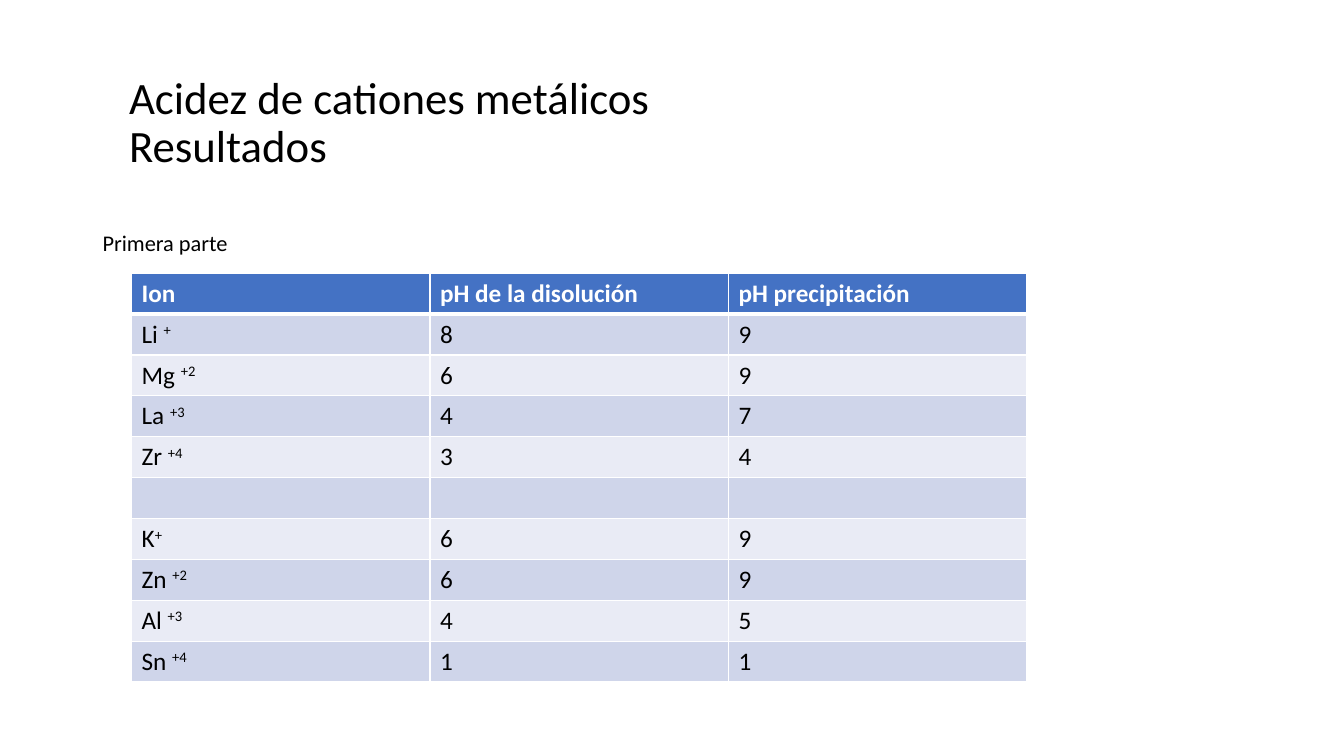
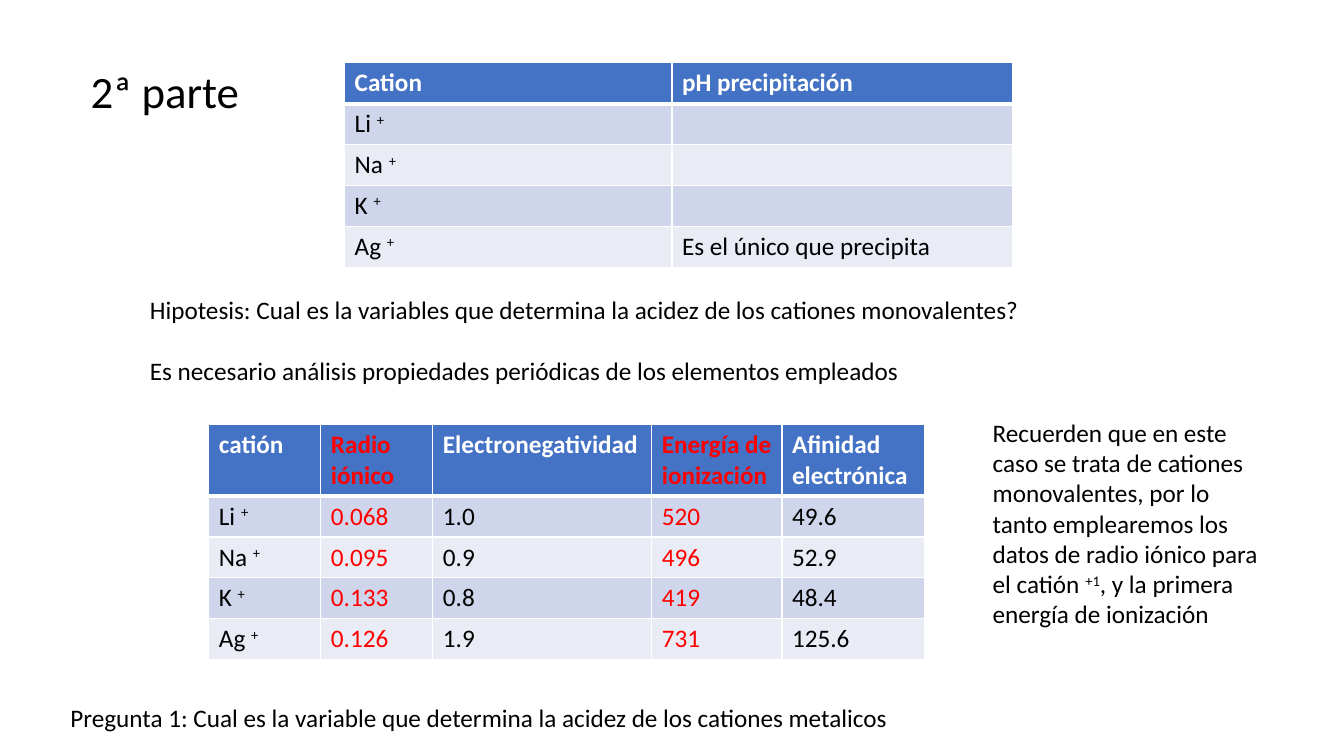
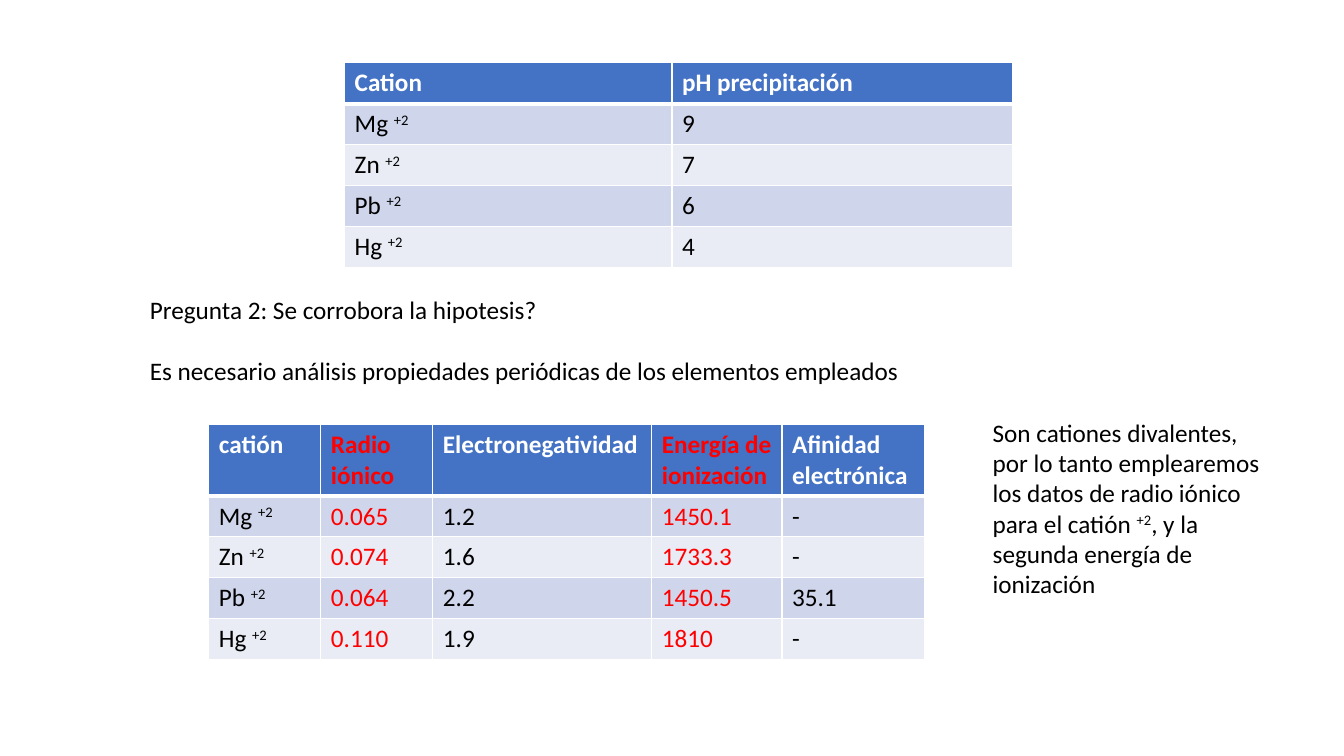
from dataclasses import dataclass
from lxml.etree import SubElement
from pptx import Presentation
from pptx.dml.color import RGBColor as Color
from pptx.enum.text import MSO_ANCHOR as Anchor, MSO_AUTO_SIZE as AutoSize, PP_ALIGN as Align
from pptx.oxml.ns import qn
from pptx.util import Pt


@dataclass(frozen=True)
class Theme:
    font: str = "Calibri"
    text: str = "000000"
    light: str = "FFFFFF"
    accent: str = "FF0000"
    header: str = "4472C4"
    bands: tuple = ("CFD5EA", "E9EBF5")
    title_size: float = 32
    body_size: float = 18
    label_size: float = 16
    line_spacing: float = 0.9
    superscript: str = "30000"
    paragraph_gap: float = 22
    row_height: float = 29.2
    tall_header: float = 51.1
    border: float = 1
    header_border: float = 3


THEME = Theme()

PH_PLACE = dict(left=246.2, top=44.9, widths=(233.8, 243))
PROPERTY_PLACE = dict(left=149.2, top=303.2, widths=(80, 80, 156.4, 93, 101.6),
                      header_height=THEME.tall_header, accent_columns=(1, 3))
STATEMENT_BOX = (100, 206.6, 670, 73)
NOTE_BOX = (702, 294.5, 210, 160)

PH_HEADER = ("Cation", "pH precipitación")
PROPERTY_HEADER = ("catión", "Radio iónico", "Electronegatividad",
                   "Energía de ionización", "Afinidad electrónica")
ANALYSIS = "Es necesario análisis propiedades periódicas de los elementos empleados"

SLIDES = [
    dict(
        title=("Acidez de cationes metálicos\vResultados", (85, 42.5, 688, 84.2)),
        label=("Primera parte", (66.2, 162, 726, 30)),
        tables=[(dict(left=94, top=195.2, widths=(213.2,) * 3), [
            ("Ion", "pH de la disolución", "pH precipitación"),
            ("Li ^+", "8", "9"),
            ("Mg ^+2", "6", "9"),
            ("La ^+3", "4", "7"),
            ("Zr ^+4", "3", "4"),
            ("", "", ""),
            ("K^+", "6", "9"),
            ("Zn ^+2", "6", "9"),
            ("Al ^+3", "4", "5"),
            ("Sn ^+4", "1", "1"),
        ])],
        texts=[],
    ),
    dict(
        title=("2ª parte", (57.6, 33.8, 180, 54)),
        tables=[
            (PH_PLACE, [
                PH_HEADER,
                ("Li ^+", ""),
                ("Na ^+", ""),
                ("K ^+", ""),
                ("Ag ^+", "Es el único que precipita"),
            ]),
            (PROPERTY_PLACE, [
                PROPERTY_HEADER,
                ("Li ^+", "0.068", "1.0", "520", "49.6"),
                ("Na ^+", "0.095", "0.9", "496", "52.9"),
                ("K ^+", "0.133", "0.8", "419", "48.4"),
                ("Ag ^+", "0.126", "1.9", "731", "125.6"),
            ]),
        ],
        texts=[
            (("Hipotesis: Cual es la variables que determina la acidez de los cationes "
              "monovalentes?", ANALYSIS), STATEMENT_BOX),
            (("Recuerden que en este caso se trata de cationes monovalentes, por lo tanto "
              "emplearemos los datos de radio iónico para el catión ^+1^, y la primera "
              "energía de ionización",), NOTE_BOX),
            (("Pregunta 1: Cual es la variable que determina la acidez de los cationes "
              "metalicos",), (43.2, 498.2, 626, 30)),
        ],
    ),
    dict(
        tables=[
            (PH_PLACE, [
                PH_HEADER,
                ("Mg ^+2", "9"),
                ("Zn ^+2", "7"),
                ("Pb ^+2", "6"),
                ("Hg ^+2", "4"),
            ]),
            (PROPERTY_PLACE, [
                PROPERTY_HEADER,
                ("Mg ^+2", "0.065", "1.2", "1450.1", "-"),
                ("Zn ^+2", "0.074", "1.6", "1733.3", "-"),
                ("Pb ^+2", "0.064", "2.2", "1450.5", "35.1"),
                ("Hg ^+2", "0.110", "1.9", "1810", "-"),
            ]),
        ],
        texts=[
            (("Pregunta 2: Se corrobora la hipotesis?", ANALYSIS), STATEMENT_BOX),
            (("Son cationes divalentes, por lo tanto emplearemos los datos de radio iónico "
              "para el catión ^+2^, y la segunda energía de ionización",), NOTE_BOX),
        ],
    ),
]


def format_run(run, size, color=THEME.text, bold=False):
    run.font.name = THEME.font
    run.font.size = Pt(size)
    run.font.bold = bold
    run.font.color.rgb = Color.from_string(color)


def write(paragraph, text, size=THEME.body_size, color=THEME.text, bold=False):
    for index, part in enumerate(text.split("^")):
        if part:
            run = paragraph.add_run()
            run.text = part
            format_run(run, size, color, bold)
            if index % 2:
                run.font._element.set("baseline", THEME.superscript)


def add_title(slide, text, box):
    shape = slide.shapes.title
    shape.left, shape.top, shape.width, shape.height = map(Pt, box)
    frame = shape.text_frame
    frame.text = text
    frame.word_wrap = True
    frame.auto_size = AutoSize.NONE
    frame.vertical_anchor = Anchor.BOTTOM
    paragraph = frame.paragraphs[0]
    paragraph.alignment = Align.LEFT
    paragraph.line_spacing = THEME.line_spacing
    for run in paragraph.runs:
        format_run(run, THEME.title_size)


def add_text(slide, texts, box, size=THEME.body_size, line_spacing=None):
    frame = slide.shapes.add_textbox(*map(Pt, box)).text_frame
    frame.word_wrap = True
    for index, text in enumerate(texts):
        paragraph = frame.add_paragraph() if index else frame.paragraphs[0]
        paragraph.line_spacing = line_spacing
        if index:
            paragraph.space_before = Pt(THEME.paragraph_gap)
        write(paragraph, text, size)


def set_borders(cell, row_index):
    properties = cell._tc.get_or_add_tcPr()
    top = THEME.header_border if row_index == 1 else THEME.border
    bottom = THEME.header_border if row_index == 0 else THEME.border
    for side, width in zip("LRTB", (THEME.border, THEME.border, top, bottom)):
        line = SubElement(properties, qn(f"a:ln{side}"), w=str(Pt(width)))
        fill = SubElement(line, qn("a:solidFill"))
        SubElement(fill, qn("a:srgbClr"), val=THEME.light)


def add_table(slide, rows, left, top, widths, header_height=THEME.row_height, accent_columns=()):
    heights = [header_height] + [THEME.row_height] * (len(rows) - 1)
    table = slide.shapes.add_table(len(rows), len(widths), Pt(left), Pt(top),
                                   Pt(sum(widths)), Pt(sum(heights))).table
    for column, width in zip(table.columns, widths):
        column.width = Pt(width)
    for row_index, (values, height) in enumerate(zip(rows, heights)):
        table.rows[row_index].height = Pt(height)
        is_header = row_index == 0
        background = THEME.header if is_header else THEME.bands[(row_index - 1) % 2]
        base_color = THEME.light if is_header else THEME.text
        for column_index, value in enumerate(values):
            cell = table.cell(row_index, column_index)
            set_borders(cell, row_index)
            cell.fill.solid()
            cell.fill.fore_color.rgb = Color.from_string(background)
            color = THEME.accent if column_index in accent_columns else base_color
            write(cell.text_frame.paragraphs[0], value, color=color, bold=is_header)


def main():
    presentation = Presentation()
    presentation.slide_width, presentation.slide_height = Pt(960), Pt(540)
    title_only, blank = presentation.slide_layouts[5], presentation.slide_layouts[6]
    for content in SLIDES:
        slide = presentation.slides.add_slide(title_only if "title" in content else blank)
        if "title" in content:
            add_title(slide, *content["title"])
        if "label" in content:
            text, box = content["label"]
            add_text(slide, [text], box, THEME.label_size, THEME.line_spacing)
        for place, rows in content["tables"]:
            add_table(slide, rows, **place)
        for texts, box in content["texts"]:
            add_text(slide, texts, box)
    presentation.save("out.pptx")


if __name__ == "__main__":
    main()
